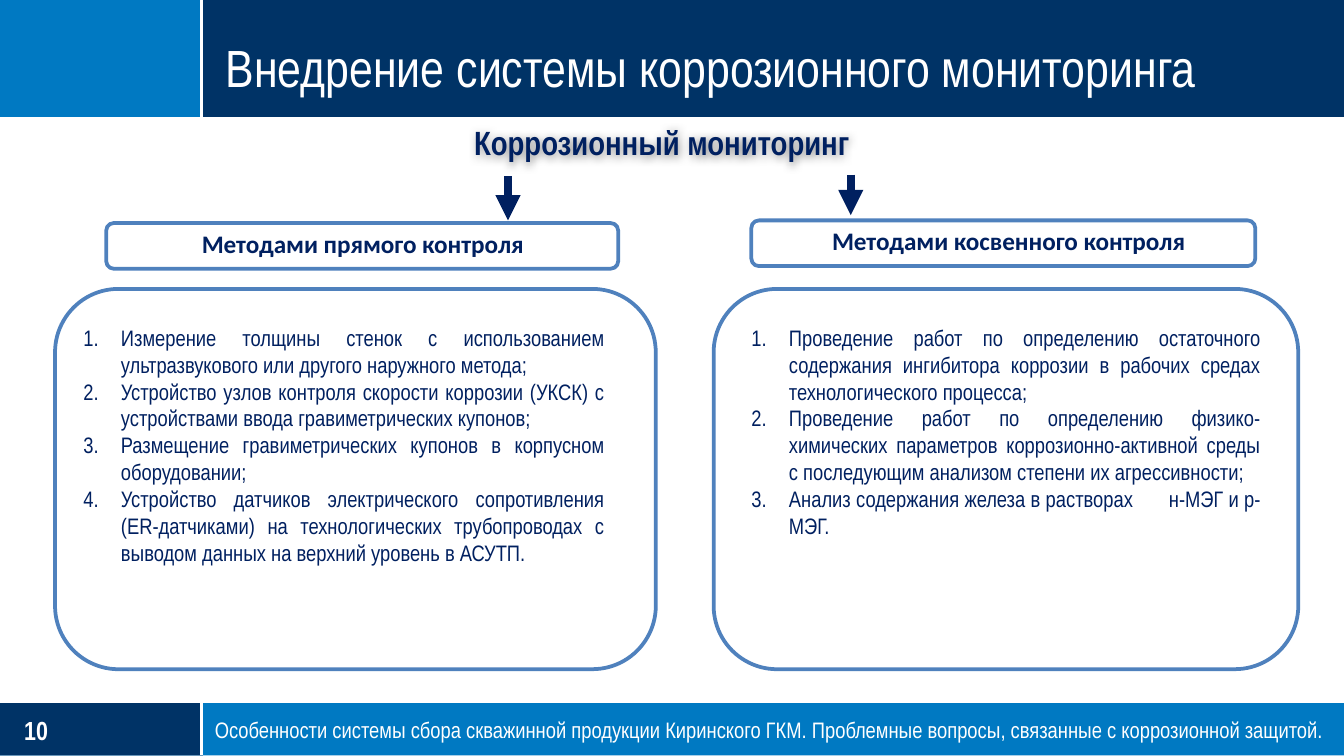
"""Build the corrosion monitoring slide with its two groups of methods."""
from lxml import etree
from pptx import Presentation, util as u
from pptx.dml.color import RGBColor
from pptx.enum import shapes as sh, text as tx
from pptx.oxml import ns

NAVY = RGBColor(0x00, 0x33, 0x66)
BLUE = RGBColor(0x00, 0x79, 0xC2)
INK = RGBColor(0x00, 0x20, 0x60)
EDGE = RGBColor(0x4F, 0x81, 0xBD)
WHITE = RGBColor(0xFF, 0xFF, 0xFF)
NARROW = "Arial Narrow"

TITLE = "Внедрение системы коррозионного мониторинга"
HEAD = "Коррозионный мониторинг"
FOOT = ("Особенности системы сбора скважинной продукции Киринского ГКМ. "
        "Проблемные вопросы, связанные с коррозионной защитой.")
BARS = [
    ((0, 5.23, 10, 0.39), BLUE),
    ((0, 0, 10, 0.87), NAVY),
    ((0, 0, 1.51, 0.87), BLUE),
    ((0, 5.23, 1.51, 0.39), NAVY),
]
RULES = [
    (0, 5.22, 10, 5.22),
    (1.5, 5.22, 1.5, 5.62),
    (1.5, 0, 1.5, 0.88),
    (0, 0.88, 10, 0.88),
]
GROUPS = [
    {
        "name": "Методами прямого контроля",
        "tag": (0.79, 1.66, 3.81, 0.34), "label": (0.73, 1.65, 3.94, 0.33),
        "arrow": (3.78, 1.31, 3.78, 1.64),
        "frame": (0.41, 2.15, 4.47, 2.83), "list": (0.52, 2.36, 4.08, 2.95),
        "items": [
            "Измерение толщины стенок с использованием ультразвукового "
            "или другого наружного метода;",
            "Устройство узлов контроля скорости коррозии (УКСК) с "
            "устройствами ввода гравиметрических купонов;",
            "Размещение гравиметрических купонов в корпусном оборудовании;",
            "Устройство датчиков электрического сопротивления "
            "(ER-датчиками) на технологических трубопроводах с выводом "
            "данных на верхний уровень в АСУТП.",
        ],
    },
    {
        "name": "Методами косвенного контроля",
        "tag": (5.59, 1.64, 3.75, 0.34), "label": (5.61, 1.63, 3.79, 0.33),
        "arrow": (6.33, 1.3, 6.33, 1.6),
        "frame": (5.31, 2.15, 4.35, 2.83), "list": (5.49, 2.36, 3.99, 2.55),
        "items": [
            "Проведение работ по определению остаточного содержания "
            "ингибитора коррозии в рабочих средах технологического процесса;",
            "Проведение работ по определению физико-химических параметров "
            "коррозионно-активной среды с последующим анализом степени их "
            "агрессивности;",
            "Анализ содержания железа в растворах\tн-МЭГ и р-МЭГ.",
        ],
    },
]


def add(node, tag, **attrs):
    return etree.SubElement(node, ns.qn(tag), attrs)


def place(shape, box):
    shape.left, shape.top, shape.width, shape.height = map(u.Inches, box)


def number(para):
    props = para._p.get_or_add_pPr()
    props.set("marL", str(u.Inches(0.28)))
    props.set("indent", str(-u.Inches(0.28)))
    add(props, "a:buFont", typeface=NARROW)
    add(props, "a:buAutoNum", type="arabicPeriod")
    if "\t" in para.text:
        tabs = add(props, "a:tabLst")
        add(tabs, "a:tab", pos=str(u.Inches(3.1)), algn="l")


def write(shape, lines, size=12, color=INK, font=NARROW, bold=False,
          align=tx.PP_ALIGN.LEFT, anchor=tx.MSO_ANCHOR.TOP, inset=None,
          listed=False):
    frame = shape.text_frame
    frame.word_wrap = True
    frame.auto_size = tx.MSO_AUTO_SIZE.NONE
    frame.vertical_anchor = anchor
    if inset is not None:
        frame.margin_left = frame.margin_right = u.Inches(inset)
        frame.margin_top = frame.margin_bottom = u.Inches(inset)
    for i, line in enumerate(lines):
        para = frame.paragraphs[0] if i == 0 else frame.add_paragraph()
        run = para.add_run()
        run.text = line
        para.alignment = align
        para.space_before = u.Pt(0)
        if listed:
            number(para)
        run.font.size, run.font.name = u.Pt(size), font
        run.font.bold, run.font.color.rgb = bold, color


def label(slide, box, line, **form):
    shape = slide.shapes.add_textbox(*map(u.Inches, box))
    write(shape, [line], **form)
    return shape


def panel(slide, kind, box, fill, edge=None):
    shape = slide.shapes.add_shape(kind, *map(u.Inches, box))
    shape.shadow.inherit = False
    shape.fill.solid()
    shape.fill.fore_color.rgb = fill
    if edge is None:
        shape.line.fill.background()
    else:
        shape.line.color.rgb, shape.line.width = edge, u.Pt(2)


def rule(slide, ends, color, width, arrow=False):
    line = slide.shapes.add_connector(
        sh.MSO_CONNECTOR.STRAIGHT, *map(u.Inches, ends))
    line.line.color.rgb, line.line.width = color, u.Pt(width)
    if arrow:
        add(line.line._get_or_add_ln(), "a:tailEnd", type="triangle")
    add(line._element.spPr, "a:effectLst")


def glow(shape):
    effect = add(shape._element.spPr, "a:effectLst")
    shade = add(effect, "a:outerShdw", blurRad=str(u.Pt(4)),
                dist="0", dir="0", algn="ctr", rotWithShape="0")
    tint = add(shade, "a:srgbClr", val="000000")
    add(tint, "a:alpha", val="40000")


def main():
    deck = Presentation()
    deck.slide_width = u.Inches(10)
    deck.slide_height = deck.slide_width * 9 // 16
    slide = deck.slides.add_slide(deck.slide_layouts[3])
    title, *bodies = slide.placeholders
    mid = tx.PP_ALIGN.CENTER
    tree = slide.shapes._spTree

    for box, fill in BARS:
        panel(slide, sh.MSO_SHAPE.RECTANGLE, box, fill)
    label(slide, (0.18, 5.31, 1.01, 0.24), "10", size=14, color=WHITE,
          bold=True, anchor=tx.MSO_ANCHOR.MIDDLE, inset=0)
    for ends in RULES:
        rule(slide, ends, WHITE, 1.25)

    tree.append(title._element)
    place(title, (1.68, 0.05, 8.46, 0.68))
    write(title, [TITLE], size=28, color=WHITE,
          anchor=tx.MSO_ANCHOR.BOTTOM, inset=0)
    glow(label(slide, (0.3, 0.86, 9.25, 0.4), HEAD, size=18, bold=True,
               align=mid))

    for group, body in zip(GROUPS, bodies):
        round_box = sh.MSO_SHAPE.ROUNDED_RECTANGLE
        panel(slide, round_box, group["tag"], WHITE, EDGE)
        label(slide, group["label"], group["name"], size=13.5,
              font="Calibri", bold=True, align=mid)
        rule(slide, group["arrow"], INK, 4.5, arrow=True)
        panel(slide, round_box, group["frame"], WHITE, EDGE)
        tree.append(body._element)
        place(body, group["list"])
        write(body, group["items"], align=tx.PP_ALIGN.JUSTIFY, listed=True)

    label(slide, (1.5, 5.28, 8.5, 0.45), FOOT, color=WHITE)
    deck.save("out.pptx")


if __name__ == "__main__":
    main()
